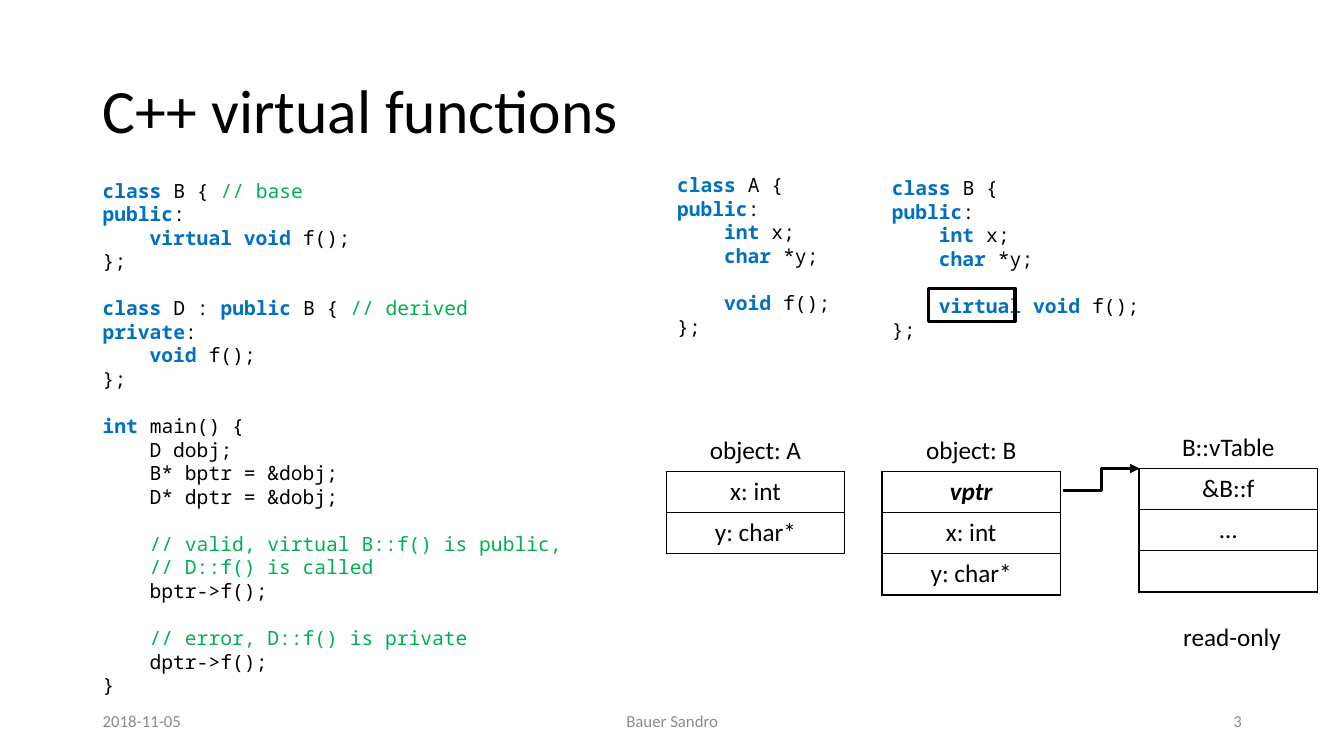
from dataclasses import dataclass
from typing import Any

from lxml import etree
from pptx import Presentation
from pptx.dml.color import RGBColor
from pptx.enum import shapes, text
from pptx.oxml import ns
from pptx.util import Pt


@dataclass(frozen=True)
class Theme:
    ink: str = "000000"
    keyword: str = "0070C0"
    comment: str = "00B050"
    muted: str = "8C8C8C"
    sans: str = "Calibri"
    mono: str = "Noto Sans Mono"
    title: float = 44
    body: float = 18
    code: float = 14
    footer: float = 12
    code_line: float = 16.9
    code_char: float = 8.4
    thin: float = 1
    thick: float = 2.25


@dataclass(frozen=True)
class Box:
    left: float
    top: float
    width: float
    height: float

    def emu(self) -> tuple[int, ...]:
        return tuple(Pt(v) for v in (self.left, self.top, self.width, self.height))


@dataclass(frozen=True)
class Label:
    words: str
    box: Box
    size: float
    color: str
    align: Any = text.PP_ALIGN.LEFT
    anchor: Any = text.MSO_ANCHOR.MIDDLE
    wrap: bool = True


@dataclass(frozen=True)
class Listing:
    """Code with keywords between backticks."""
    source: str
    box: Box
    anchor: Any = text.MSO_ANCHOR.TOP


@dataclass(frozen=True)
class Layout:
    """An object in memory: its name above its fields."""
    name: str
    fields: tuple[str, ...]
    left: float
    top: float
    emphasis: str = ""


THEME = Theme()
FIELD_WIDTH, FIELD_HEIGHT = 127.5, 29.4
FOOTER_TOP, FOOTER_HEIGHT = 500.4, 28.8

MAIN_CODE = """\
`class` B { // base
`public`:
    `virtual void` f();
};

`class` D : `public` B { // derived
`private`:
    `void` f();
};

`int` main() {
    D dobj;
    B* bptr = &dobj;
    D* dptr = &dobj;

    // valid, virtual B::f() is public,
    // D::f() is called
    bptr->f();

    // error, D::f() is private
    dptr->f();
}"""

CLASS_CODE = """\
`class` {name} {{
`public`:
    `int` x;
    `char` *y;

    `{method}` f();
}};"""

LISTINGS = (
    Listing(MAIN_CODE, Box(66.25, 122.4, 653.75, 380.2), text.MSO_ANCHOR.MIDDLE),
    Listing(CLASS_CODE.format(name="B", method="virtual void"), Box(630, 122.4, 216, 126)),
    Listing(CLASS_CODE.format(name="A", method="void"), Box(476.6, 120.2, 126.7, 126)),
)
LAYOUTS = (
    Layout("object: A", ("x: int", "y: char*"), 475.9, 307.4),
    Layout("object: B", ("vptr", "x: int", "y: char*"), 630, 307.4, "vptr"),
    Layout("B::vTable", ("&B::f", "…", ""), 813.6, 305.3),
)
LABELS = (
    Label("2018-11-05", Box(66.25, FOOTER_TOP, 216, FOOTER_HEIGHT),
          THEME.footer, THEME.muted),
    Label("Bauer Sandro", Box(318.25, FOOTER_TOP, 324, FOOTER_HEIGHT),
          THEME.footer, THEME.muted, text.PP_ALIGN.CENTER),
    Label("3", Box(678.25, FOOTER_TOP, 216, FOOTER_HEIGHT),
          THEME.footer, THEME.muted, text.PP_ALIGN.RIGHT),
    Label("read-only", Box(838.1, 440.6, 85, 28.8), THEME.body, THEME.ink,
          anchor=text.MSO_ANCHOR.TOP, wrap=False),
)


def apply(target: Any, values: dict[str, Any]) -> None:
    for name, value in values.items():
        setattr(target, name, value)


def add_run(p: Any, words: str, size: float, color: str = THEME.ink,
            font: str = THEME.sans, bold: bool = False, italic: bool = False) -> None:
    r = p.add_run()
    r.text = words
    apply(r.font, {"name": font, "size": Pt(size), "bold": bold, "italic": italic})
    r.font.color.rgb = RGBColor.from_string(color)


def draw_title(slide: Any, words: str, box: Box) -> None:
    sp = slide.shapes.title
    apply(sp, dict(zip(("left", "top", "width", "height"), box.emu())))
    tf = sp.text_frame
    apply(tf, {"vertical_anchor": text.MSO_ANCHOR.MIDDLE, "word_wrap": True,
               "auto_size": text.MSO_AUTO_SIZE.NONE})
    p = tf.paragraphs[0]
    apply(p, {"alignment": text.PP_ALIGN.LEFT, "line_spacing": 0.9})
    add_run(p, words, THEME.title)


def add_frame(slide: Any, box: Box, anchor: Any, wrap: bool = True) -> Any:
    tf = slide.shapes.add_textbox(*box.emu()).text_frame
    apply(tf, {"word_wrap": wrap, "vertical_anchor": anchor})
    return tf


def draw_label(slide: Any, label: Label) -> None:
    p = add_frame(slide, label.box, label.anchor, label.wrap).paragraphs[0]
    p.alignment = label.align
    add_run(p, label.words, label.size, label.color)


def draw_listing(slide: Any, listing: Listing) -> None:
    """Blank source lines become space before, leading spaces become an indent."""
    tf = add_frame(slide, listing.box, listing.anchor)
    p, gap = tf.paragraphs[0], 0.0
    for number, line in enumerate(listing.source.split("\n")):
        if not line:
            gap = THEME.code_line
            continue
        if number:
            p = tf.add_paragraph()
        p.space_before, gap = Pt(gap), 0.0
        words = line.lstrip()
        indent = (len(line) - len(words)) * THEME.code_char
        p._p.get_or_add_pPr().set("marL", str(Pt(indent)))
        code, slashes, comment = words.partition("//")
        pieces = [(piece, THEME.keyword if i % 2 else THEME.ink)
                  for i, piece in enumerate(code.split("`"))]
        for piece, color in pieces + [(slashes + comment, THEME.comment)]:
            if piece:
                add_run(p, piece, THEME.code, color, THEME.mono, color == THEME.keyword)


def set_borders(cell: Any, visible: str) -> None:
    """Draw the edges named in visible (letters of LRTB) and hide the others."""
    tc_pr = cell._tc.get_or_add_tcPr()
    for index, edge in enumerate("LRTB"):
        ln = etree.Element(ns.qn(f"a:ln{edge}"), w=str(Pt(THEME.thin)))
        if edge in visible:
            fill = etree.SubElement(ln, ns.qn("a:solidFill"))
            etree.SubElement(fill, ns.qn("a:srgbClr"), val=THEME.ink)
        else:
            etree.SubElement(ln, ns.qn("a:noFill"))
        tc_pr.insert(index, ln)


def draw_layout(slide: Any, layout: Layout) -> None:
    rows = (layout.name, *layout.fields)
    box = Box(layout.left, layout.top, FIELD_WIDTH, FIELD_HEIGHT * len(rows))
    table = slide.shapes.add_table(len(rows), 1, *box.emu()).table
    apply(table, {"first_row": False, "horz_banding": False})
    for i, words in enumerate(rows):
        table.rows[i].height = Pt(FIELD_HEIGHT)
        cell = table.cell(i, 0)
        cell.fill.background()
        set_borders(cell, "LRTB" if i else "B")
        p = cell.text_frame.paragraphs[0]
        p.alignment = text.PP_ALIGN.CENTER
        if words:
            strong = words == layout.emphasis
            add_run(p, words, THEME.body, bold=strong, italic=strong)


def style_line(line: Any) -> None:
    line.color.rgb = RGBColor.from_string(THEME.ink)
    line.width = Pt(THEME.thick)


def draw_highlight(slide: Any, box: Box) -> None:
    sp = slide.shapes.add_shape(shapes.MSO_SHAPE.RECTANGLE, *box.emu())
    sp.shadow.inherit = False
    sp.fill.background()
    style_line(sp.line)


def draw_pointer(slide: Any, start: tuple[float, float], end: tuple[float, float]) -> None:
    ends = (Pt(v) for v in (*start, *end))
    arrow = slide.shapes.add_connector(shapes.MSO_CONNECTOR.ELBOW, *ends)
    style_line(arrow.line)
    etree.SubElement(arrow.line._get_or_add_ln(), ns.qn("a:tailEnd"), type="triangle")
    etree.SubElement(arrow._element.spPr, ns.qn("a:effectLst"))


def main() -> None:
    prs = Presentation()
    apply(prs, {"slide_width": Pt(960), "slide_height": Pt(540)})
    slide = prs.slides.add_slide(prs.slide_layouts.get_by_name("Title Only"))
    draw_title(slide, "C++ virtual functions", Box(66.25, 28.8, 828, 104.4))
    for draw, items in ((draw_listing, LISTINGS), (draw_layout, LAYOUTS), (draw_label, LABELS)):
        for item in items:
            draw(slide, item)
    draw_highlight(slide, Box(663.1, 205.9, 61.9, 23.8))
    draw_pointer(slide, (759.6, 350.2), (814, 334.7))
    prs.save("out.pptx")


if __name__ == "__main__":
    main()
